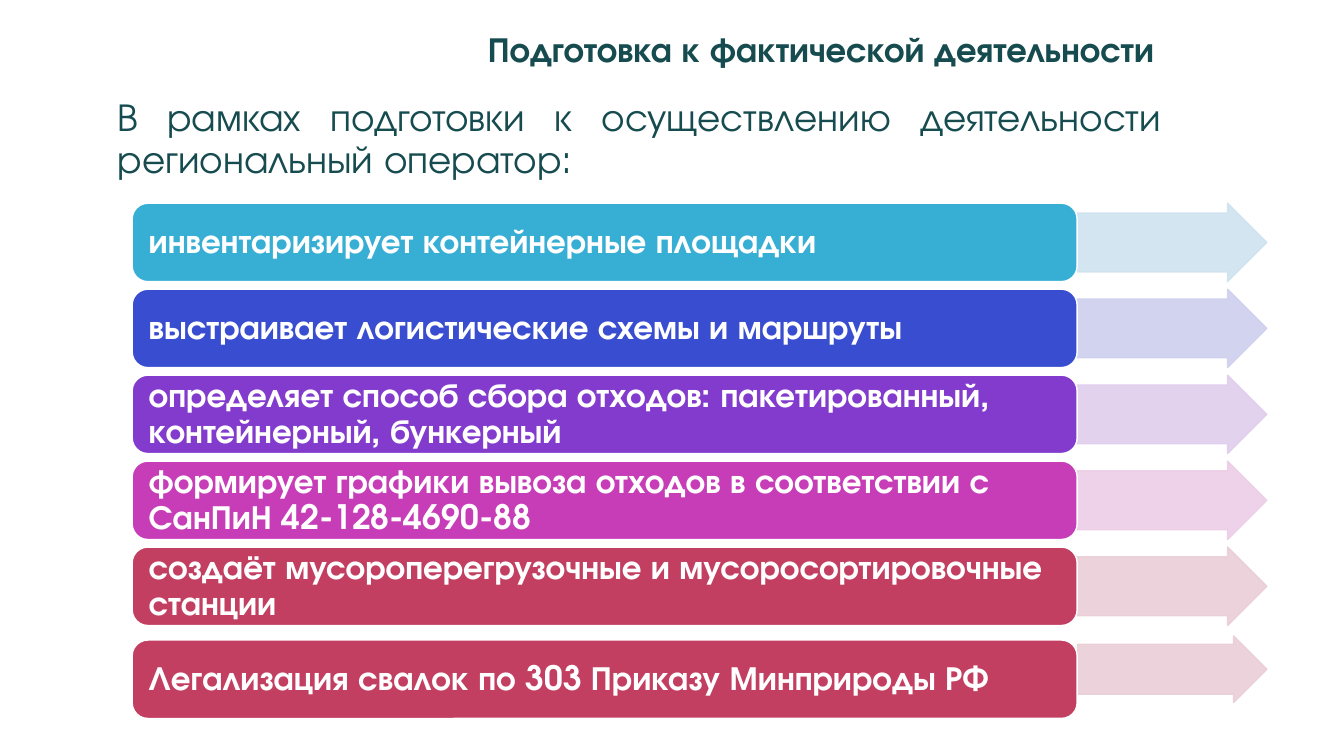
from lxml import etree
from pptx import Presentation
from pptx.dml.color import RGBColor
from pptx.enum.shapes import MSO_SHAPE
from pptx.enum.text import MSO_ANCHOR, MSO_AUTO_SIZE, PP_ALIGN
from pptx.oxml.ns import qn
from pptx.util import Pt

ROUND, ARROW = MSO_SHAPE.ROUNDED_RECTANGLE, MSO_SHAPE.RIGHT_ARROW
TOP, MIDDLE, BOTTOM = MSO_ANCHOR.TOP, MSO_ANCHOR.MIDDLE, MSO_ANCHOR.BOTTOM
LEFT, RIGHT, JUSTIFY = PP_ALIGN.LEFT, PP_ALIGN.RIGHT, PP_ALIGN.JUSTIFY

FONT = "TeX Gyre Adventor"
DARK, WHITE = "164B4F", "FFFFFF"
TITLE = "Подготовка к фактической деятельности"
INTRO = "В рамках подготовки к осуществлению деятельности региональный оператор:"
# text, bar colour, arrow colour, arrow left
STEPS = [
    ("инвентаризирует контейнерные площадки", "37AFD5", "CEE3EF", 769.7),
    ("выстраивает логистические схемы и маршруты", "394DD0", "CED0EE", 737.3),
    ("определяет способ сбора отходов: пакетированный, контейнерный, бункерный",
     "823BCC", "DFCEED", 684),
    ("формирует графики вывоза отходов в соответствии с СанПиН 42-128-4690-88",
     "C73DB7", "ECCEE7", 683.3),
    ("создаёт мусороперегрузочные и мусоросортировочные станции",
     "C23F61", "EACED6", 684),
    ("Легализация свалок по 303 Приказу Минприроды РФ",
     "C23F61", "EACED6", 769.7),
]
BAR_X, BAR_W, BAR_H = 94.4, 675, 56
FIRST_Y, PITCH, LAST_Y = 145.2, 61.4, 457.2
TIP_X = 904.9
LAST_TIP_Y, LAST_TIP_H = 454.3, 47.5


def color(code):
    return RGBColor.from_string(code)


def write(shape, text, size, tint=DARK, bold=False, align=LEFT,
          anchor=TOP, pad=(7.2, 3.6)):
    frame = shape.text_frame
    frame.word_wrap = True
    frame.auto_size = MSO_AUTO_SIZE.NONE
    frame.vertical_anchor = anchor
    frame.margin_left = frame.margin_right = Pt(pad[0])
    frame.margin_top = frame.margin_bottom = Pt(pad[1])
    para = frame.paragraphs[0]
    para.alignment = align
    para.line_spacing = 0.9
    para.space_before = Pt(0)
    run = para.add_run()
    run.text = text
    font = run.font
    font.name, font.size, font.bold = FONT, Pt(size), bold
    font.color.rgb = color(tint)


def draw(kind, x, y, w, h, fill, line):
    shape = slide.shapes.add_shape(kind, Pt(x), Pt(y), Pt(w), Pt(h))
    shape.shadow.inherit = False
    shape.fill.solid()
    shape.fill.fore_color.rgb = color(fill)
    shape.line.color.rgb = color(line)
    shape.line.width = Pt(1)
    return shape


def fade(shape, share):
    """Set the opacity of fill and line, in percent."""
    for node in shape._element.spPr.iter(qn("a:srgbClr")):
        etree.SubElement(node, qn("a:alpha")).set("val", str(share * 1000))


deck = Presentation()
deck.slide_width, deck.slide_height = Pt(960), Pt(540)
slide = deck.slides.add_slide(deck.slide_layouts[5])

title = slide.shapes.title
title.left, title.top = Pt(183.6), Pt(9.4)
title.width, title.height = Pt(648), Pt(43.9)
write(title, TITLE, 25, bold=True, align=RIGHT, anchor=BOTTOM)

intro = slide.shapes.add_textbox(Pt(77), Pt(66.2), Pt(759.6), Pt(70.6))
write(intro, INTRO, 28, align=JUSTIFY)

for i, (text, fill, pale, tip_x) in enumerate(STEPS):
    last = i == len(STEPS) - 1
    y = LAST_Y if last else FIRST_Y + i * PITCH
    tip_y, tip_h = (LAST_TIP_Y, LAST_TIP_H) if last else (y, BAR_H)
    arrow = draw(ARROW, tip_x, tip_y, TIP_X - tip_x, tip_h, pale, pale)
    arrow.adjustments[0], arrow.adjustments[1] = 0.75, 0.5
    fade(arrow, 90)
    bar = draw(ROUND, BAR_X, y, BAR_W, BAR_H, fill, WHITE)
    bar.adjustments[0] = 0.2
    write(bar, text, 24, tint=WHITE, bold=True, anchor=MIDDLE, pad=(8.6, 5.8))

deck.save("out.pptx")
